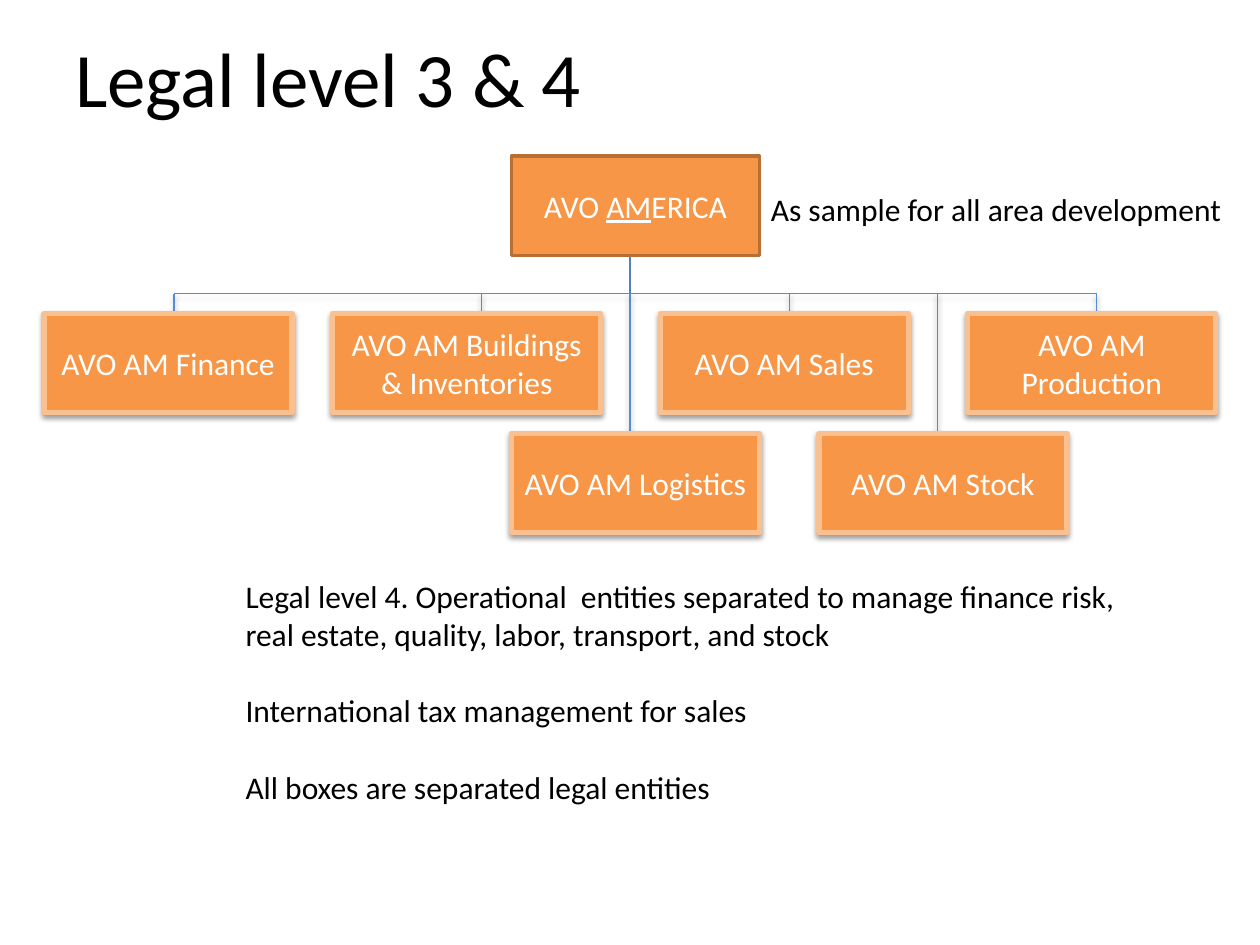
from dataclasses import dataclass

from lxml import etree
from pptx import Presentation
from pptx import util as u
from pptx.dml.color import RGBColor
from pptx.enum import shapes, text
from pptx.oxml import ns


@dataclass(frozen=True)
class Theme:
    font: str = "Calibri"
    title_size: float = 44
    body_size: float = 18
    ink: str = "000000"
    white: str = "FFFFFF"
    box_fill: str = "F79646"
    entity_border: str = "FAC090"
    root_border: str = "B76F34"
    trunk: str = "4F81BD"
    branch: str = "558ED5"


THEME = Theme()
BOX_WIDTH, BOX_HEIGHT = 5.0, 2.0
PITCH = 6.2  # distance between neighbouring branches

# Name, centre from the chart's left edge, width
UPPER_ROW = [
    ("AVO AM Finance", 2.5, BOX_WIDTH),
    ("AVO AM Buildings & Inventories", 8.52, 5.4),
    ("AVO AM Sales", 14.92, BOX_WIDTH),
    ("AVO AM Production", 14.92 + PITCH, BOX_WIDTH),
]
LOWER_ROW = [
    ("AVO AM Logistics", 11.92, BOX_WIDTH),
    ("AVO AM Stock", 11.92 + PITCH, BOX_WIDTH),
]


def set_effects(shape, shadow):
    """Give the shape a soft shadow straight below it, or no effect at all."""
    properties = shape._element.spPr
    effects = etree.SubElement(properties, ns.qn("a:effectLst"))
    if shadow:
        outer = etree.SubElement(
            effects, ns.qn("a:outerShdw"), blurRad=str(u.Pt(3.1)),
            dist=str(u.Pt(1.6)), dir="5400000", rotWithShape="0")
        color = etree.SubElement(outer, ns.qn("a:srgbClr"), val=THEME.ink)
        etree.SubElement(color, ns.qn("a:alpha"), val="38000")


def style_font(paragraph, size, color):
    font = paragraph.font
    font.name = THEME.font
    font.size = u.Pt(size)
    font.color.rgb = RGBColor.from_string(color)


def add_text(slide, box, lines, size=THEME.body_size,
             anchor=text.MSO_ANCHOR.TOP):
    """Write (text, space before in points) lines into a text box."""
    frame = slide.shapes.add_textbox(*map(u.Cm, box)).text_frame
    frame.word_wrap = True
    frame.vertical_anchor = anchor
    for index, (line, space) in enumerate(lines):
        paragraph = frame.paragraphs[0] if index == 0 else frame.add_paragraph()
        paragraph.text = line
        paragraph.space_before = u.Pt(space)
        style_font(paragraph, size, THEME.ink)


def add_line(slide, start, end, color, shadow=True):
    line = slide.shapes.add_connector(
        shapes.MSO_CONNECTOR.STRAIGHT, *map(u.Cm, (*start, *end)))
    line.line.color.rgb = RGBColor.from_string(color)
    line.line.width = u.Pt(0.75)
    set_effects(line, shadow)


def add_entity(slide, box, runs, border, border_width, shadow=True):
    """Draw a legal entity; runs are (text, underlined) pairs."""
    entity = slide.shapes.add_shape(
        shapes.MSO_SHAPE.RECTANGLE, *map(u.Cm, box))
    entity.fill.solid()
    entity.fill.fore_color.rgb = RGBColor.from_string(THEME.box_fill)
    entity.line.color.rgb = RGBColor.from_string(border)
    entity.line.width = u.Pt(border_width)
    set_effects(entity, shadow)
    frame = entity.text_frame
    frame.word_wrap = True
    frame.vertical_anchor = text.MSO_ANCHOR.MIDDLE
    paragraph = frame.paragraphs[0]
    paragraph.alignment = text.PP_ALIGN.CENTER
    style_font(paragraph, THEME.body_size, THEME.white)
    for content, underlined in runs:
        run = paragraph.add_run()
        run.text = content
        if underlined:
            run.font.underline = True


def add_branches(slide, left, top):
    """Draw the trunk, the bus and the drops, which end behind the boxes."""
    bus = top + 2.77
    first, trunk = left + 2.62, left + 11.81
    add_line(slide, (trunk, bus), (trunk, top + 0.8), THEME.trunk, False)
    drops = [(first + column * PITCH, top + 3.5) for column in range(4)]
    drops += [(trunk + column * PITCH, top + 6.38) for column in range(2)]
    for x, end in drops:
        add_line(slide, (x, end), (x, bus), THEME.branch)
    add_line(slide, (first, bus), (first + 3 * PITCH, bus), THEME.branch)


def add_organisation(slide, left, top):
    add_branches(slide, left, top)
    for row, offset in ((UPPER_ROW, 3.17), (LOWER_ROW, 5.59)):
        for name, center, width in row:
            box = (left + center - width / 2, top + offset, width, BOX_HEIGHT)
            add_entity(slide, box, [(name, False)], THEME.entity_border, 3)
    add_entity(slide, (left + 9.42, top, BOX_WIDTH, BOX_HEIGHT),
               [("AVO ", False), ("AM", True), ("ERICA", False)],
               THEME.root_border, 2, shadow=False)
    add_text(slide, (left + 14.4, top + 0.56, 9.8, 1.02),
             [("As sample for all area development", 0)])


def add_notes_text(slide, left, top):
    add_text(slide, (left, top, 18.8, 6.4), [
        ("Legal level 4. Operational  entities separated to manage "
         "finance risk,", 0),
        ("real estate, quality, labor, transport, and stock", 0),
        ("International tax management for sales", 22),
        ("All boxes are separated legal entities", 22),
    ])


def main():
    presentation = Presentation()
    presentation.slide_width = u.Cm(25.4)
    presentation.slide_height = u.Cm(19.05)
    slide = presentation.slides.add_slide(presentation.slide_layouts[6])
    add_text(slide, (1.27, -0.05, 22.86, 3.18), [("Legal level 3 & 4", 0)],
             THEME.title_size, text.MSO_ANCHOR.MIDDLE)
    add_organisation(slide, 0.89, 3.15)
    add_notes_text(slide, 4.7, 11.51)
    presentation.save("out.pptx")


if __name__ == "__main__":
    main()
